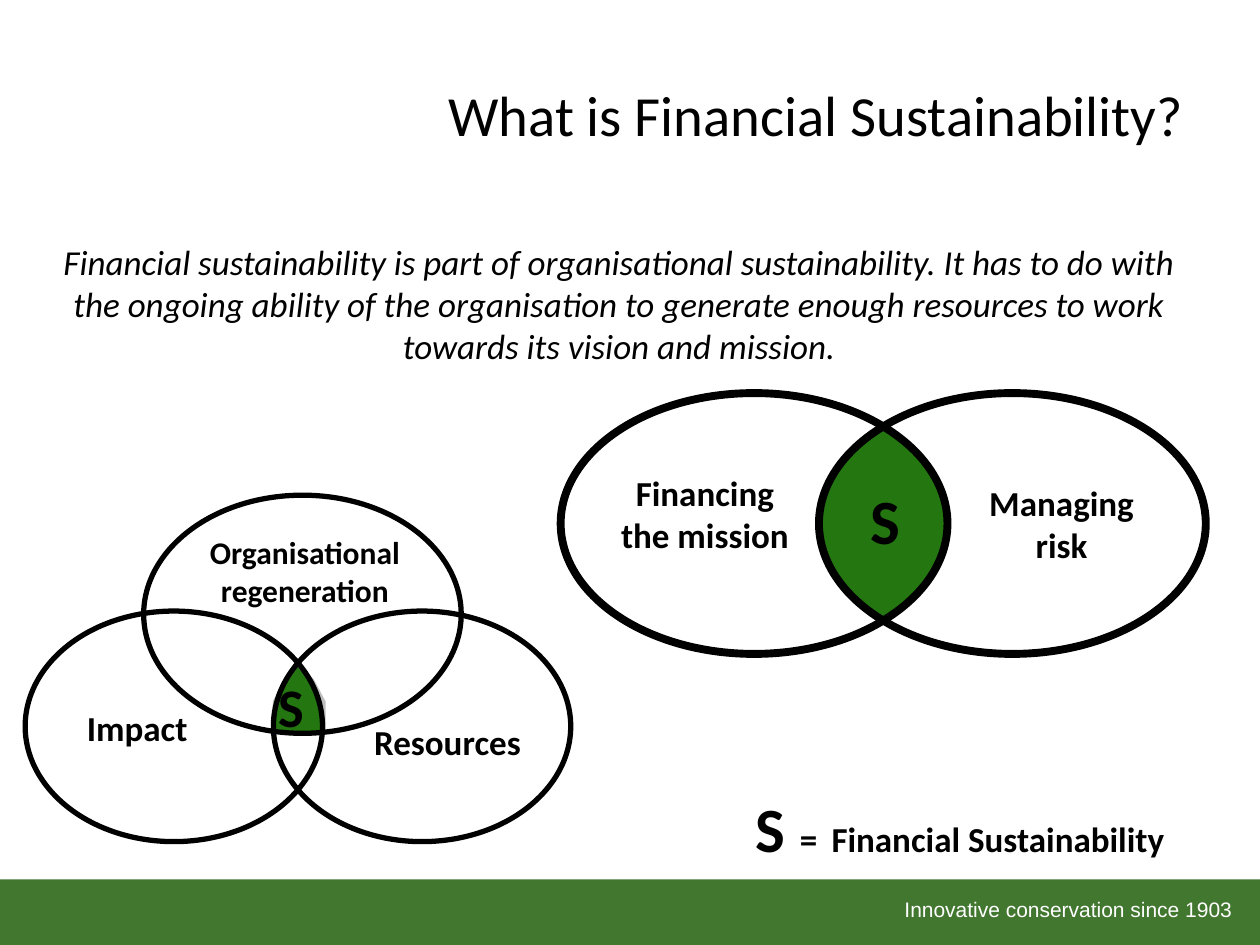
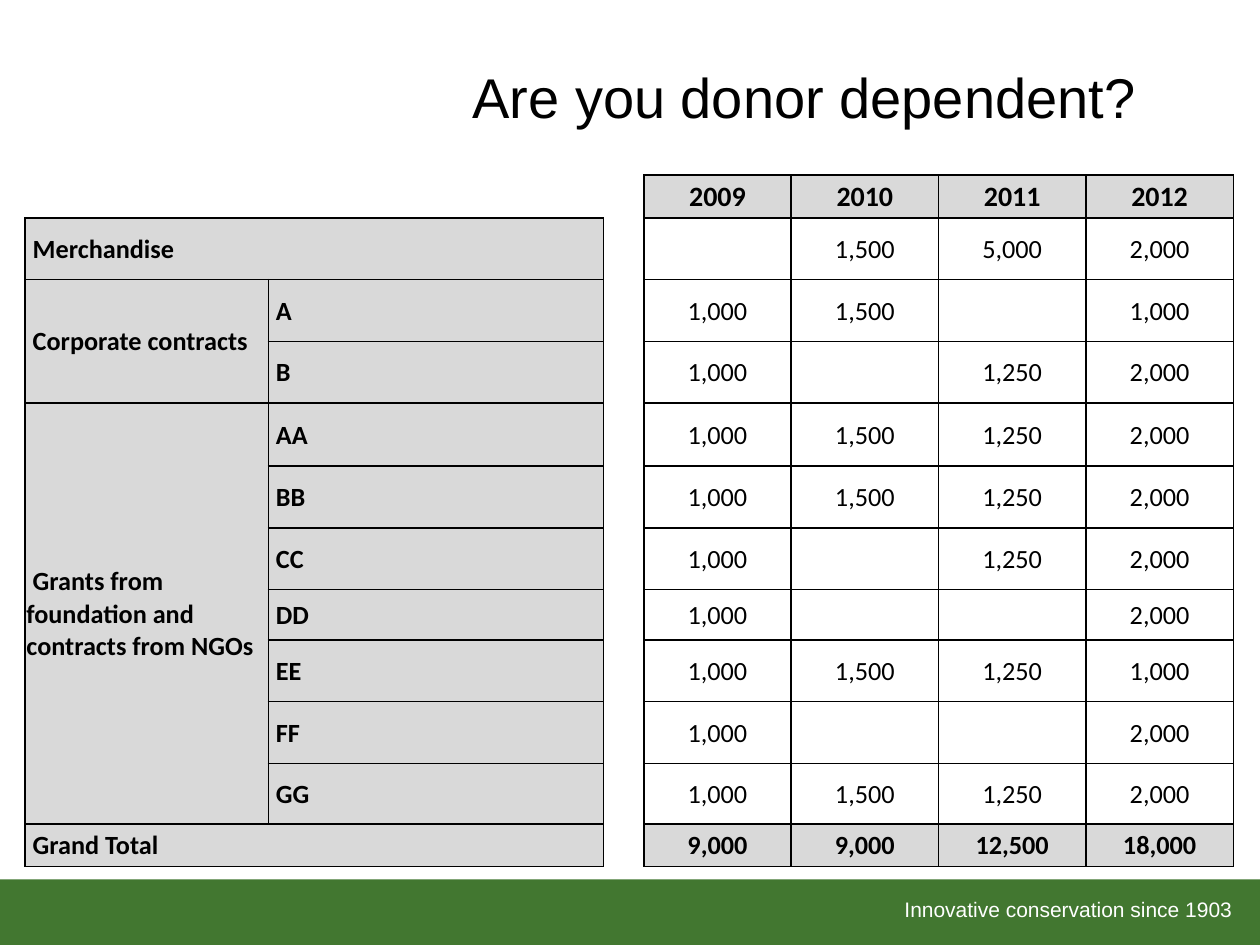
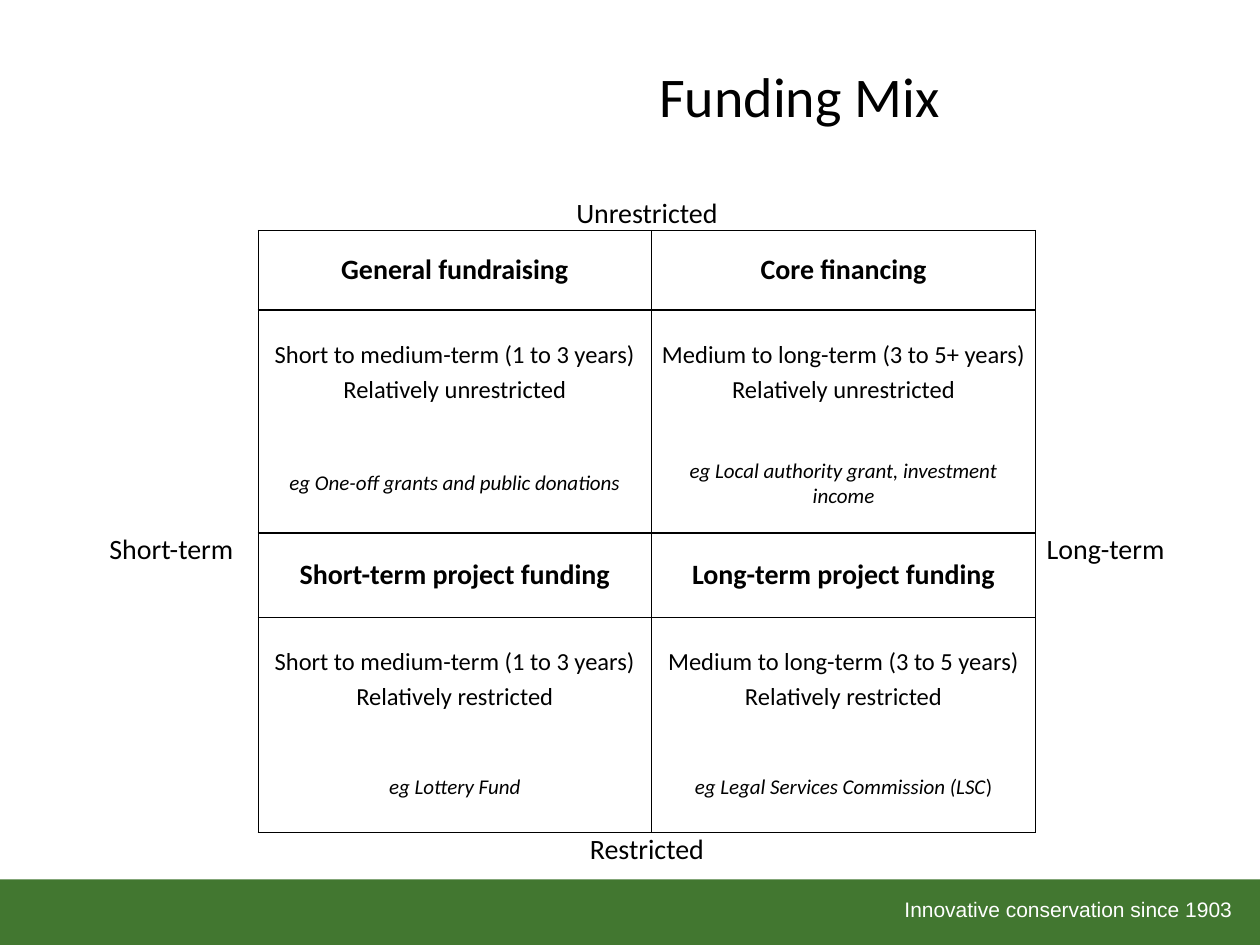
from math import asin, cos, pi, sin, sqrt

from lxml import etree
from pptx import Presentation
from pptx.dml.color import RGBColor
from pptx.enum.shapes import MSO_SHAPE
from pptx.enum.text import MSO_ANCHOR, PP_ALIGN
from pptx.oxml.ns import qn
from pptx.util import Inches, Pt

BLACK, WHITE = "000000", "FFFFFF"
BAND_GREEN, OVERLAP_GREEN = "427730", "237610"
HEADER_GREY = "D9D9D9"
NO_TABLE_STYLE = "{2D5ABB26-0587-4C30-8999-92F81FD0307C}"
CENTER, LEFT, RIGHT = PP_ALIGN.CENTER, PP_ALIGN.LEFT, PP_ALIGN.RIGHT


def color(value):
    return RGBColor.from_string(value)


def style_span(span, size, bold=False, italic=False, font="Calibri", ink=BLACK):
    span.font.size = Pt(size)
    span.font.bold = bold
    span.font.italic = italic
    span.font.name = font
    span.font.color.rgb = color(ink)


def write(frame, text, size, align=CENTER, **style):
    """Fill a text frame, one paragraph for each line of text."""
    frame.text = text
    for para in frame.paragraphs:
        para.alignment = align
        for span in para.runs:
            style_span(span, size, **style)


def add_text(page, left, top, width, height, text, size, wrap=True,
             anchor=MSO_ANCHOR.TOP, **style):
    box = page.shapes.add_textbox(Inches(left), Inches(top), Inches(width), Inches(height))
    box.text_frame.word_wrap = wrap
    box.text_frame.vertical_anchor = anchor
    write(box.text_frame, text, size, **style)
    return box


def add_title(page, left, top, width, height, text, size=32, font="Calibri"):
    add_text(page, left, top, width, height, text, size, font=font, anchor=MSO_ANCHOR.MIDDLE)


def new_page(deck):
    """Add a blank slide with the footer band."""
    page = deck.slides.add_slide(deck.slide_layouts[6])
    band = page.shapes.add_shape(MSO_SHAPE.RECTANGLE, 0, Inches(6.98), Inches(10), Inches(0.52))
    band.shadow.inherit = False
    band.fill.solid()
    band.fill.fore_color.rgb = color(BAND_GREEN)
    band.line.fill.background()
    add_text(page, 5.47, 7.07, 4.41, 0.3, "Innovative conservation since 1903", 12,
             align=RIGHT, font="Arial", ink=WHITE)
    return page


# Venn diagrams

def add_ring(page, left, top, width, height, weight):
    ring = page.shapes.add_shape(MSO_SHAPE.OVAL, Inches(left), Inches(top),
                                 Inches(width), Inches(height))
    ring.shadow.inherit = False
    ring.fill.background()
    ring.line.color.rgb = color(BLACK)
    ring.line.width = Pt(weight)


def add_overlap(page, points, edge):
    corners = [(Inches(x), Inches(y)) for x, y in points]
    builder = page.shapes.build_freeform(*corners[0])
    builder.add_line_segments(corners[1:], close=True)
    overlap = builder.convert_to_shape()
    overlap.shadow.inherit = False
    overlap.fill.solid()
    overlap.fill.fore_color.rgb = color(OVERLAP_GREEN)
    overlap.line.color.rgb = color(edge)
    overlap.line.width = Pt(2)


def lens_points(left, top, width, height, shift, steps=24):
    """Outline shared by an ellipse and its copy moved right by shift."""
    radius_x, radius_y = width / 2, height / 2
    middle_x, middle_y = left + (width + shift) / 2, top + radius_y
    limit = asin(sqrt(1 - (shift / width) ** 2))
    angles = [limit * (2 * step / steps - 1) for step in range(steps)]
    right_arc = [(radius_x * cos(angle) - shift / 2, radius_y * sin(angle)) for angle in angles]
    outline = right_arc + [(-x, -y) for x, y in right_arc]
    return [(middle_x + x, middle_y + y) for x, y in outline]


def add_two_ring_venn(page, left, top):
    width, height, shift = 3.07, 2.07, 2.05
    add_overlap(page, lens_points(left, top, width, height, shift), "8AA6A8")
    for offset in (0, shift):
        add_ring(page, left + offset, top, width, height, 4.5)
    add_text(page, left + 0.24, top + 0.57, 1.81, 0.77, "Financing\nthe mission", 20, bold=True)
    add_text(page, left + 3.07, top + 0.65, 1.81, 0.77, "Managing risk", 20, bold=True)
    add_text(page, left + 2.36, top + 0.65, 0.36, 0.71, "S", 36, bold=True, align=LEFT)


def add_three_ring_venn(page, left, top):
    outline = [(2.16, 1.34), (2.28, 1.47), (2.37, 1.64), (2.37, 1.89),
               (2.12, 1.89), (1.97, 1.87), (1.98, 1.64), (2.05, 1.5)]
    add_overlap(page, [(left + x, top + y) for x, y in outline], "BFBFBF")
    for ring_left, ring_top, width, height in (
            (0, 0.92, 2.36, 1.83), (1.97, 0.92, 2.36, 1.83), (0.94, 0, 2.52, 1.89)):
        add_ring(page, left + ring_left, top + ring_top, width, height, 3)
    for label_left, label_top, width, height, text, size in (
            (1.91, 1.36, 0.41, 0.62, "S", 31),
            (0.39, 1.63, 1.01, 0.44, "Impact", 20),
            (2.67, 1.74, 1.38, 0.44, "Resources", 20)):
        add_text(page, left + label_left, top + label_top, width, height, text, size,
                 wrap=False, bold=True, align=LEFT)
    add_text(page, left + 1.18, top + 0.25, 2.08, 0.71, "Organisational regeneration", 18,
             bold=True)


def add_key(page, left, top):
    key = add_text(page, left, top, 3.58, 0.71, "S ", 36, wrap=False, bold=True, align=LEFT)
    para = key.text_frame.paragraphs[0]
    for text, size in (("=", 20), (" ", 36), ("Financial Sustainability", 20)):
        span = para.add_run()
        span.text = text
        style_span(span, size, bold=True)


def sustainability_page(deck):
    page = new_page(deck)
    add_title(page, 3.43, 0.28, 6.09, 1.25, "What is Financial Sustainability?", 32.4)
    add_text(page, 0.23, 1.86, 9.37, 1.11,
             "Financial sustainability is part of organisational sustainability. "
             "It has to do with the ongoing ability of the organisation to generate "
             "enough resources to work towards its vision and mission.", 20, italic=True)
    add_three_ring_venn(page, 0.2, 3.93)
    add_two_ring_venn(page, 4.45, 3.12)
    add_key(page, 5.9, 6.22)


# Tables

def add_plain_table(page, left, top, columns, rows, side, edge):
    """Add a table without style, with the given side and top margins in its cells."""
    table = page.shapes.add_table(len(rows), len(columns), Inches(left), Inches(top),
                                  Inches(sum(columns)), Inches(sum(rows))).table
    table.first_row = table.horz_banding = False
    next(table._tbl.iter(qn("a:tableStyleId"))).text = NO_TABLE_STYLE
    for column, width in zip(table.columns, columns):
        column.width = Inches(width)
    for row, height in zip(table.rows, rows):
        row.height = Inches(height)
    for cell in table.iter_cells():
        cell.margin_left = cell.margin_right = Inches(side)
        cell.margin_top, cell.margin_bottom = Inches(edge), 0
        cell.vertical_anchor = MSO_ANCHOR.MIDDLE
    return table


def add_borders(cell, sides="LRTB"):
    """Draw thin black borders; sides come in the order L, R, T, B, before any fill."""
    properties = cell._tc.get_or_add_tcPr()
    for side in sides:
        line = etree.SubElement(properties, qn(f"a:ln{side}"), w=str(Pt(1)))
        fill = etree.SubElement(line, qn("a:solidFill"))
        etree.SubElement(fill, qn("a:srgbClr"), val=BLACK)


def shade(cell):
    cell.fill.solid()
    cell.fill.fore_color.rgb = color(HEADER_GREY)


def add_income_table(page, left, top):
    columns = [1.93, 0.16, 2.5, 0.32] + [1.17] * 4
    rows = [0.34, 0.49, 0.49, 0.49, 0.5, 0.49, 0.49, 0.4, 0.49, 0.49, 0.48, 0.34]
    years = ["2009", "2010", "2011", "2012"]
    income = [
        ["", "1,500", "5,000", "2,000"],
        ["1,000", "1,500", "", "1,000"],
        ["1,000", "", "1,250", "2,000"],
        ["1,000", "1,500", "1,250", "2,000"],
        ["1,000", "1,500", "1,250", "2,000"],
        ["1,000", "", "1,250", "2,000"],
        ["1,000", "", "", "2,000"],
        ["1,000", "1,500", "1,250", "1,000"],
        ["1,000", "", "", "2,000"],
        ["1,000", "1,500", "1,250", "2,000"],
    ]
    totals = ["9,000", "9,000", "12,500", "18,000"]
    sources = ["A", "B", "AA", "BB", "CC", "DD", "EE", "FF", "GG"]
    # row, column, last row, last column, text
    labels = [
        (1, 0, 1, 2, "Merchandise"),
        (2, 0, 3, 0, "Corporate contracts"),
        (4, 0, 10, 0, "Grants from foundation and\ncontracts from NGOs"),
        (11, 0, 11, 2, "Grand Total"),
    ] + [(row, 1, row, 2, text) for row, text in enumerate(sources, 2)]

    table = add_plain_table(page, left, top, columns, rows, 0.01, 0.01)
    table.cell(0, 0).merge(table.cell(0, 1))
    for row in range(1, len(rows)):
        for column in range(3):
            add_borders(table.cell(row, column))
    for row, column, last_row, last_column, text in labels:
        cell = table.cell(row, column)
        cell.merge(table.cell(last_row, last_column))
        shade(cell)
        write(cell.text_frame, text, 15, align=LEFT, bold=True)
        cell.text_frame.paragraphs[0]._p.get_or_add_pPr().set("indent", str(Inches(0.05)))
    for row, values in enumerate([years] + income + [totals]):
        heading = row in (0, len(rows) - 1)
        for column, value in enumerate(values, 4):
            cell = table.cell(row, column)
            add_borders(cell)
            if heading:
                shade(cell)
            write(cell.text_frame, value, 16 if row == 0 else 15, bold=heading)


def donor_page(deck):
    page = new_page(deck)
    add_title(page, 3.27, 0.29, 6.23, 0.94, "Are you donor dependent?", font="Arial")
    add_income_table(page, 0.2, 1.39)


def fill_quadrant(table, row, column, heading, terms, example):
    """Write one quadrant into three cells that stand in a column."""
    for offset, sides in enumerate(("LRT", "LR", "LRB")):
        add_borders(table.cell(row + offset, column), sides)
    top, middle, bottom = (table.cell(row + offset, column).text_frame for offset in range(3))
    write(top, heading, 16, bold=True)
    if row == 1:
        top.paragraphs[0].space_after = Pt(3)
    write(middle, terms, 14)
    middle.paragraphs[1].space_before = Pt(3)
    write(bottom, example, 12, italic=True)


def add_funding_matrix(page, left, top):
    columns = [1.38, 3.12, 3.05, 1.11]
    rows = [0.36, 0.63, 0.99, 0.78, 0.67, 0.99, 0.72, 0.36]
    table = add_plain_table(page, left, top, columns, rows, 0.07, 0)
    for row, column, last_row, last_column in (
            (0, 1, 0, 2), (7, 1, 7, 2), (1, 0, 3, 0), (1, 3, 3, 3), (5, 0, 6, 0), (5, 3, 6, 3)):
        table.cell(row, column).merge(table.cell(last_row, last_column))
    for row, column, text, anchor in (
            (0, 1, "Unrestricted", MSO_ANCHOR.BOTTOM), (7, 1, "Restricted", MSO_ANCHOR.TOP),
            (4, 0, "Short-term", MSO_ANCHOR.TOP), (4, 3, "Long-term", MSO_ANCHOR.TOP)):
        cell = table.cell(row, column)
        cell.vertical_anchor = anchor
        write(cell.text_frame, text, 16)
    fill_quadrant(table, 1, 1, "General fundraising",
                  "Short to medium-term (1 to 3 years)\nRelatively unrestricted",
                  "eg One-off grants and public donations")
    fill_quadrant(table, 1, 2, "Core financing",
                  "Medium to long-term (3 to 5+ years)\nRelatively unrestricted",
                  "eg Local authority grant, investment income")
    fill_quadrant(table, 4, 1, "Short-term project funding",
                  "Short to medium-term (1 to 3 years)\nRelatively restricted",
                  "eg Lottery Fund")
    fill_quadrant(table, 4, 2, "Long-term project funding",
                  "Medium to long-term (3 to 5 years)\nRelatively restricted",
                  "eg Legal Services Commission (LSC")
    bracket = table.cell(6, 2).text_frame.paragraphs[0].add_run()
    bracket.text = ")"
    style_span(bracket, 12)


def funding_page(deck):
    page = new_page(deck)
    add_funding_matrix(page, 0.67, 1.47)
    add_title(page, 3.19, 0.29, 6.31, 0.93, "Funding Mix")


def main():
    deck = Presentation()
    deck.slide_width, deck.slide_height = Inches(10), Inches(7.5)
    sustainability_page(deck)
    donor_page(deck)
    funding_page(deck)
    deck.save("out.pptx")


if __name__ == "__main__":
    main()
